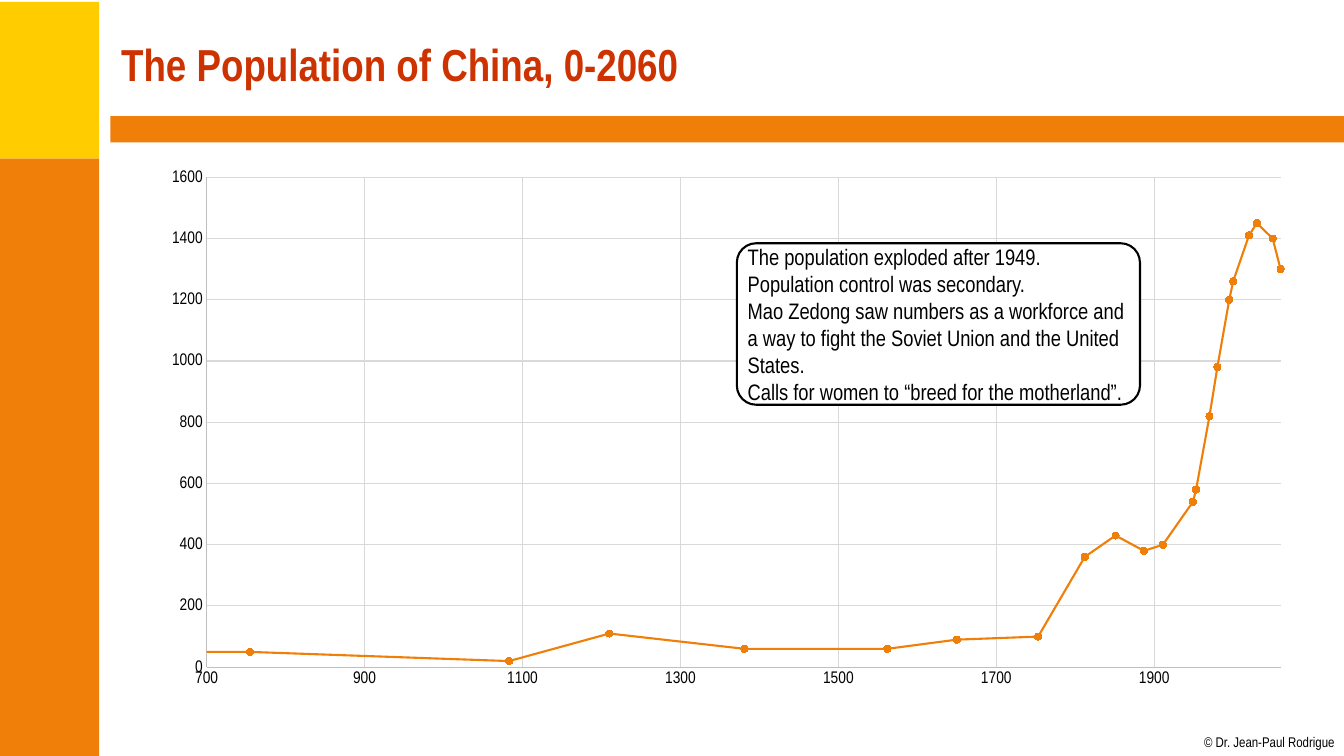
from pptx import Presentation
from pptx.chart.data import XyChartData
from pptx.dml.color import RGBColor
from pptx.enum.chart import XL_CHART_TYPE, XL_MARKER_STYLE, XL_TICK_MARK
from pptx.enum.shapes import MSO_SHAPE
from pptx.enum.text import MSO_ANCHOR, PP_ALIGN
from pptx.oxml import parse_xml
from pptx.util import Cm, Pt

RECTANGLE, ROUNDED = MSO_SHAPE.RECTANGLE, MSO_SHAPE.ROUNDED_RECTANGLE
SCATTER_LINES = XL_CHART_TYPE.XY_SCATTER_LINES
CIRCLE, NO_TICK = XL_MARKER_STYLE.CIRCLE, XL_TICK_MARK.NONE
MIDDLE, LEFT, RIGHT = MSO_ANCHOR.MIDDLE, PP_ALIGN.LEFT, PP_ALIGN.RIGHT

FONT = "Arial Narrow"
ORANGE, YELLOW, RED = "F07F09", "FFCC00", "CC3300"
BLACK, WHITE, AXIS_GREY, GRID_GREY = "000000", "FFFFFF", "BFBFBF", "D9D9D9"
SLIDE_WIDTH, SLIDE_HEIGHT = 33.87, 19.05

# Year and population in millions
POPULATION = [
    (0, 60), (100, 50), (755, 50), (1083, 20), (1210, 110), (1381, 60),
    (1562, 60), (1650, 90), (1753, 100), (1812, 360), (1851, 430),
    (1887, 380), (1911, 400), (1949, 540), (1953, 580), (1970, 820),
    (1980, 980), (1995, 1200), (2000, 1260), (2020, 1410), (2030, 1450),
    (2050, 1400), (2060, 1300),
]
REMARKS = [
    "The population exploded after 1949.",
    "Population control was secondary.",
    "Mao Zedong saw numbers as a workforce and a way to fight "
    "the Soviet Union and the United States.",
    "Calls for women to “breed for the motherland”.",
]
PLOT_LAYOUT = {"x": 0.079, "y": 0.057, "w": 0.888, "h": 0.84}


def color(hex_code):
    return RGBColor.from_string(hex_code)


def lengths(box):
    return [Cm(value) for value in box]


def style_font(font, size, hex_code=BLACK, bold=False):
    font.name, font.size, font.bold = FONT, Pt(size), bold
    font.color.rgb = color(hex_code)


def style_line(line, hex_code, width):
    line.color.rgb = color(hex_code)
    line.width = Pt(width)


def add_block(slide, box, fill, preset=RECTANGLE):
    block = slide.shapes.add_shape(preset, *lengths(box))
    block.shadow.inherit = False
    block.fill.solid()
    block.fill.fore_color.rgb = color(fill)
    block.line.fill.background()
    return block


def write_lines(frame, lines, size, align=LEFT, hex_code=BLACK, bold=False):
    for index, line in enumerate(lines):
        paragraph = frame.paragraphs[0] if index == 0 else frame.add_paragraph()
        paragraph.alignment = align
        run = paragraph.add_run()
        run.text = line
        style_font(run.font, size, hex_code, bold)


def set_margins(frame, margin):
    frame.margin_left = frame.margin_right = Cm(margin)
    frame.margin_top = frame.margin_bottom = Cm(margin)


def add_frame(slide, box):
    """Colour bands along the left edge and under the title."""
    left, top, width, height = box
    side_width, yellow_height = 2.5, 3.95
    add_block(slide, (left, top, side_width, yellow_height), YELLOW)
    add_block(slide, (left, top + yellow_height, side_width, height - yellow_height), ORANGE)
    rule_left = left + side_width + 0.28
    add_block(slide, (rule_left, top + 2.88, left + width - rule_left, 0.66), ORANGE)


def add_title(slide, box, text):
    title = slide.shapes.title
    title.left, title.top, title.width, title.height = lengths(box)
    title.text_frame.vertical_anchor = MIDDLE
    title.text_frame.word_wrap = True
    write_lines(title.text_frame, [text], 32, hex_code=RED, bold=True)


def style_axis(axis, low, high):
    axis.minimum_scale, axis.maximum_scale, axis.major_unit = low, high, 200
    axis.major_tick_mark = axis.minor_tick_mark = NO_TICK
    axis.has_major_gridlines = True
    style_line(axis.major_gridlines.format.line, GRID_GREY, 0.75)
    style_line(axis.format.line, AXIS_GREY, 0.75)
    style_font(axis.tick_labels.font, 12)


def fix_plot_area(chart):
    plot_area = chart.element.chart.plotArea
    for layout in plot_area.xpath("c:layout"):
        plot_area.remove(layout)
    modes = '<c:xMode val="edge"/><c:yMode val="edge"/>'
    sizes = "".join(f'<c:{key} val="{value}"/>' for key, value in PLOT_LAYOUT.items())
    plot_area.insert(0, parse_xml(
        '<c:layout xmlns:c="http://schemas.openxmlformats.org/drawingml/2006/chart">'
        f'<c:manualLayout><c:layoutTarget val="inner"/>{modes}{sizes}'
        '</c:manualLayout></c:layout>'))


def add_population_chart(slide, box):
    data = XyChartData()
    points = data.add_series("Series 1")
    for year, millions in POPULATION:
        points.add_data_point(year, millions)
    chart = slide.shapes.add_chart(SCATTER_LINES, *lengths(box), data).chart
    chart.has_legend = chart.has_title = False
    style_font(chart.font, 10)
    style_axis(chart.category_axis, 700, 2060)
    style_axis(chart.value_axis, 0, 1600)
    fix_plot_area(chart)

    plot = chart.plots[0]
    plot.vary_by_categories = False
    population = plot.series[0]
    population.smooth = False
    style_line(population.format.line, ORANGE, 1.5)
    marker = population.marker
    marker.style, marker.size = CIRCLE, 5
    marker.format.fill.solid()
    marker.format.fill.fore_color.rgb = color(ORANGE)
    marker.format.line.color.rgb = color(ORANGE)


def add_callout(slide, box):
    callout = add_block(slide, box, WHITE, ROUNDED)
    callout.adjustments[0] = 0.12
    style_line(callout.line, BLACK, 1.5)
    frame = callout.text_frame
    frame.word_wrap = True
    frame.vertical_anchor = MIDDLE
    set_margins(frame, 0.13)
    write_lines(frame, REMARKS, 16)


def add_copyright(slide, box):
    frame = slide.shapes.add_textbox(*lengths(box)).text_frame
    frame.word_wrap = False
    set_margins(frame, 0)
    write_lines(frame, ["© Dr. Jean-Paul Rodrigue"], 10, align=RIGHT)


def main():
    deck = Presentation()
    deck.slide_width, deck.slide_height = Cm(SLIDE_WIDTH), Cm(SLIDE_HEIGHT)
    slide = deck.slides.add_slide(deck.slide_layouts[5])
    content_left, content_width = 2.8, 30.48

    add_frame(slide, (0, 0.05, SLIDE_WIDTH, SLIDE_HEIGHT - 0.05))
    add_title(slide, (content_left, 0.28, content_width, 2.64),
              "The Population of China, 0-2060")
    add_population_chart(slide, (content_left, 3.63, content_width, 14.7))
    add_callout(slide, (18.57, 6.13, 10.16, 4.07))
    add_copyright(slide, (30.3, 18.49, 3.33, 0.43))
    deck.save("out.pptx")


if __name__ == "__main__":
    main()
